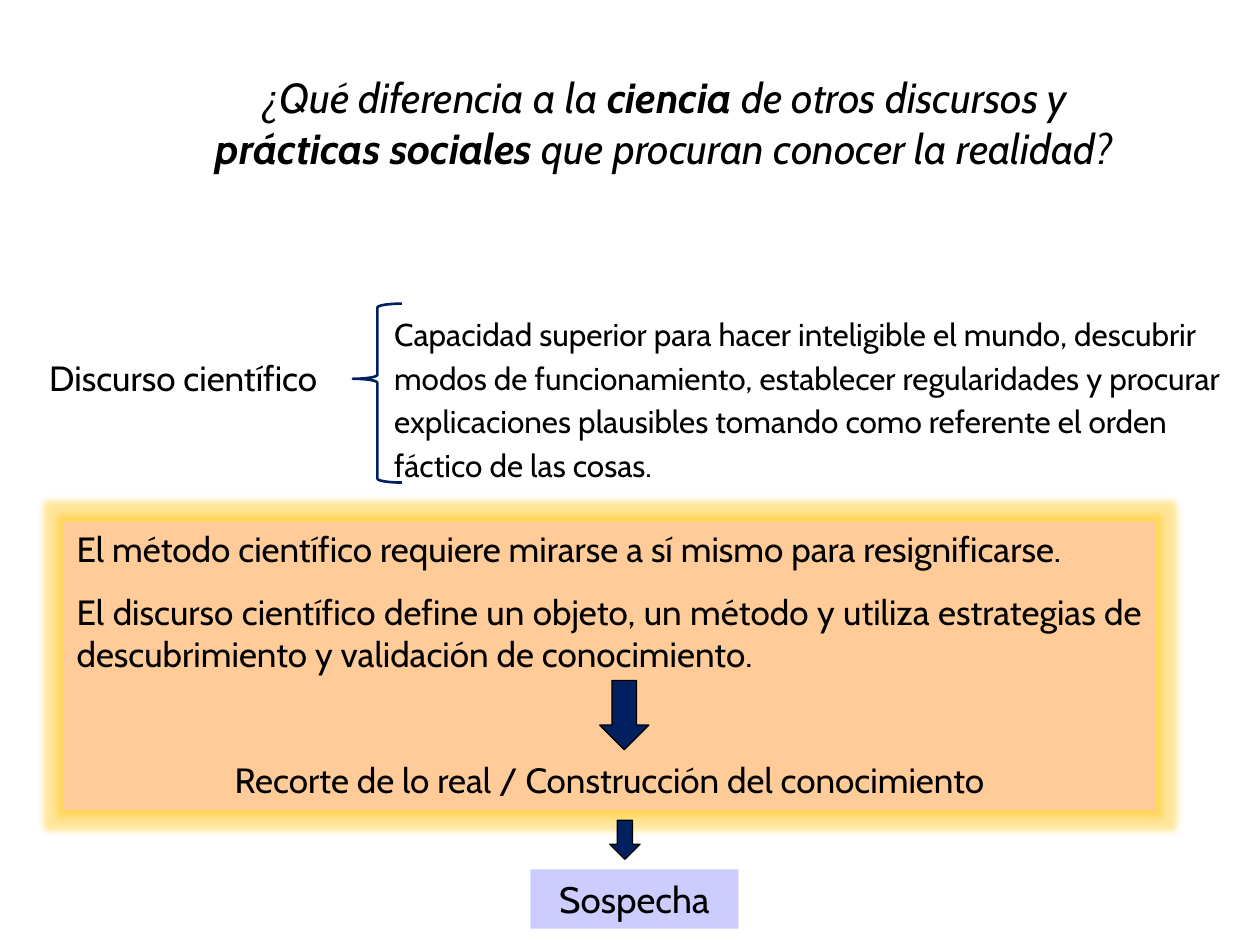
from dataclasses import dataclass
from typing import Optional

from lxml.etree import SubElement
from pptx import Presentation
from pptx.dml.color import RGBColor
from pptx.enum.shapes import MSO_SHAPE as Shape
from pptx.enum.text import MSO_ANCHOR as Anchor, MSO_AUTO_SIZE as AutoSize, PP_ALIGN as Align
from pptx.oxml.ns import qn
from pptx.util import Emu, Inches, Pt

FONT = "Cabin"
COLORS = {
    "text": "000000",
    "navy": "002060",
    "peach": "FFCC99",
    "lilac": "CCCCFF",
    "glow": "FFC000",
}


@dataclass(frozen=True)
class Area:
    left: float
    top: float
    width: float
    height: float

    def lengths(self) -> tuple[Emu, ...]:
        return tuple(Inches(v) for v in (self.left, self.top, self.width, self.height))


@dataclass(frozen=True)
class Figure:
    kind: Shape
    area: Area
    fill: Optional[str] = None
    line: Optional[str] = None
    line_width: float = 0.75
    adjustments: tuple[float, ...] = ()


ARROW = (0.5, 0.5)
METHOD_BOX = Figure(Shape.RECTANGLE, Area(0.51, 4.14, 8.66, 2.29), fill="peach")
SUSPICION_BOX = Figure(Shape.RECTANGLE, Area(4.21, 6.9, 1.65, 0.47), fill="lilac")
MARKS = [
    Figure(Shape.DOWN_ARROW, Area(4.76, 5.4, 0.39, 0.55), "navy", "text", adjustments=ARROW),
    Figure(Shape.LEFT_BRACE, Area(2.8, 2.41, 0.39, 1.42), line="navy", line_width=1.5,
           adjustments=(0.08, 0.42)),
    Figure(Shape.DOWN_ARROW, Area(4.84, 6.51, 0.24, 0.31), "navy", "text", adjustments=ARROW),
]


def rgb(name: str) -> RGBColor:
    return RGBColor.from_string(COLORS[name])


def prepare_frame(box, anchor=Anchor.TOP):
    frame = box.text_frame
    frame.word_wrap = True
    frame.auto_size = AutoSize.NONE
    frame.vertical_anchor = anchor
    return frame


def write(para, text: str, *, size: float, align=Align.LEFT, italic=False,
          spacing: float = 1.0, before: float = 0, after: float = 0) -> None:
    """Fill a paragraph; parts between asterisks become bold."""
    para.alignment = align
    para.line_spacing = spacing
    para.space_before, para.space_after = Pt(before), Pt(after)
    for index, part in enumerate(text.split("*")):
        span = para.add_run()
        span.text = part
        font = span.font
        font.name, font.size = FONT, Pt(size)
        font.bold, font.italic = index % 2 == 1, italic
        font.color.rgb = rgb("text")


def add_text(page, area: Area, text: str, **style) -> None:
    box = page.shapes.add_textbox(*area.lengths())
    write(prepare_frame(box).paragraphs[0], text, **style)


def draw(page, figure: Figure):
    shape = page.shapes.add_shape(figure.kind, *figure.area.lengths())
    shape.shadow.inherit = False
    for index, value in enumerate(figure.adjustments):
        shape.adjustments[index] = value
    if figure.fill:
        shape.fill.solid()
        shape.fill.fore_color.rgb = rgb(figure.fill)
    else:
        shape.fill.background()
    if figure.line:
        shape.line.color.rgb = rgb(figure.line)
        shape.line.width = Pt(figure.line_width)
    else:
        shape.line.fill.background()
    return shape


def add_glow(shape, color: str, radius: float, opacity: int) -> None:
    effects = shape.element.spPr.find(qn("a:effectLst"))
    glow = SubElement(effects, qn("a:glow"), rad=str(Pt(radius)))
    tint = SubElement(glow, qn("a:srgbClr"), val=COLORS[color])
    SubElement(tint, qn("a:alpha"), val=str(opacity * 1000))


def add_title(page) -> None:
    title = page.shapes.title
    title.left, title.top, title.width, title.height = Area(1.3, 0.52, 7.95, 1.92).lengths()
    write(prepare_frame(title).paragraphs[0],
          "¿Qué diferencia a la *ciencia* de otros discursos y *prácticas sociales* "
          "que procuran conocer la realidad?",
          size=24, align=Align.CENTER, italic=True)


def add_method_box(page) -> None:
    box = draw(page, METHOD_BOX)
    add_glow(box, "glow", radius=8, opacity=40)
    frame = prepare_frame(box)
    lines = [
        ("El método científico requiere mirarse a sí mismo para resignificarse.",
         Align.JUSTIFY, 0),
        ("El discurso científico define un objeto, un método y utiliza estrategias de "
         "descubrimiento y validación de conocimiento.", Align.JUSTIFY, 0),
        ("Recorte de lo real / Construcción del conocimiento", Align.CENTER, 36),
    ]
    for index, (text, align, before) in enumerate(lines):
        para = frame.add_paragraph() if index else frame.paragraphs[0]
        write(para, text, size=20, align=align, before=before, after=12)


def main() -> None:
    deck = Presentation()
    deck.slide_width, deck.slide_height = Inches(10), Inches(7.5)
    page = deck.slides.add_slide(deck.slide_layouts.get_by_name("Title Only"))

    add_title(page)
    add_text(page, Area(0.2, 2.73, 2.51, 0.45), "Discurso científico",
             size=20, align=Align.CENTER, spacing=1.15)
    add_text(page, Area(3.03, 2.41, 6.9, 1.49),
             "Capacidad superior para hacer inteligible el mundo, descubrir modos de "
             "funcionamiento, establecer regularidades y procurar explicaciones plausibles "
             "tomando como referente el orden fáctico de las cosas.",
             size=18, spacing=1.15)
    add_method_box(page)
    for mark in MARKS:
        draw(page, mark)
    suspicion = prepare_frame(draw(page, SUSPICION_BOX), Anchor.MIDDLE)
    write(suspicion.paragraphs[0], "Sospecha", size=21, align=Align.CENTER, after=6)

    deck.save("out.pptx")


if __name__ == "__main__":
    main()
